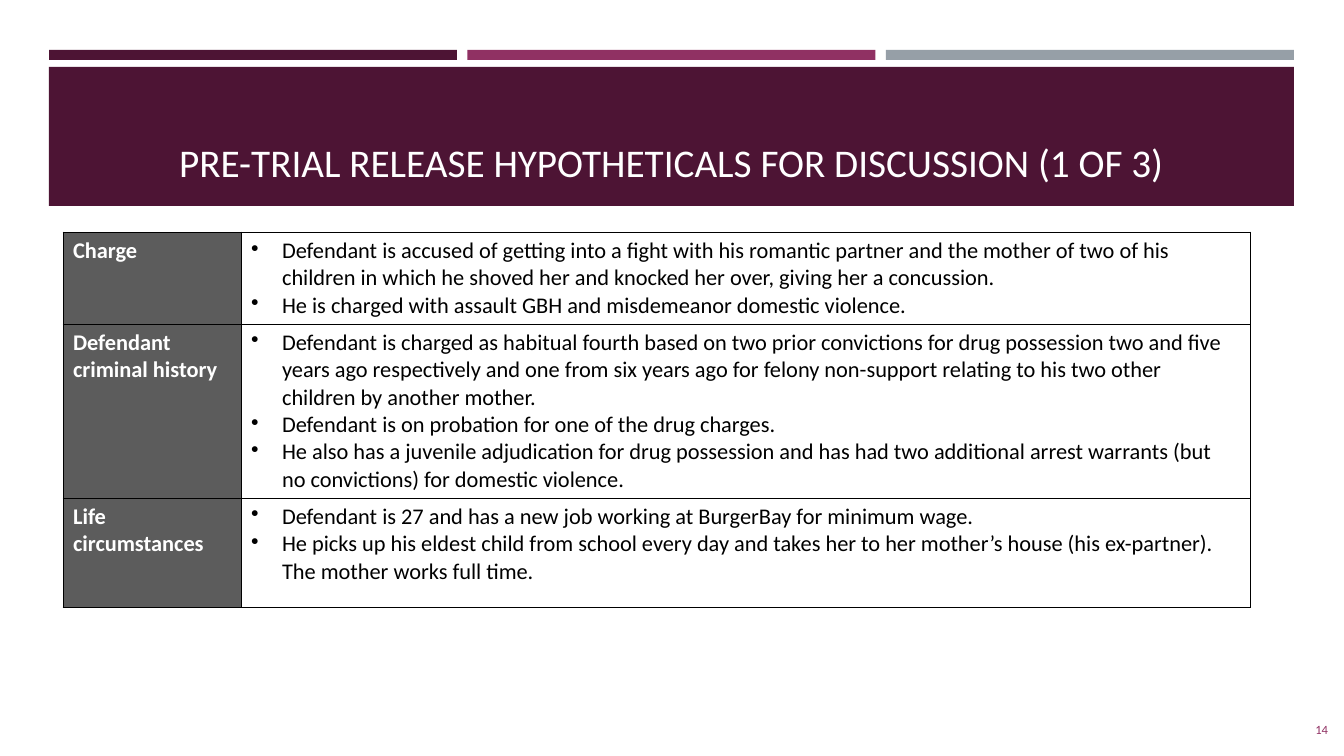
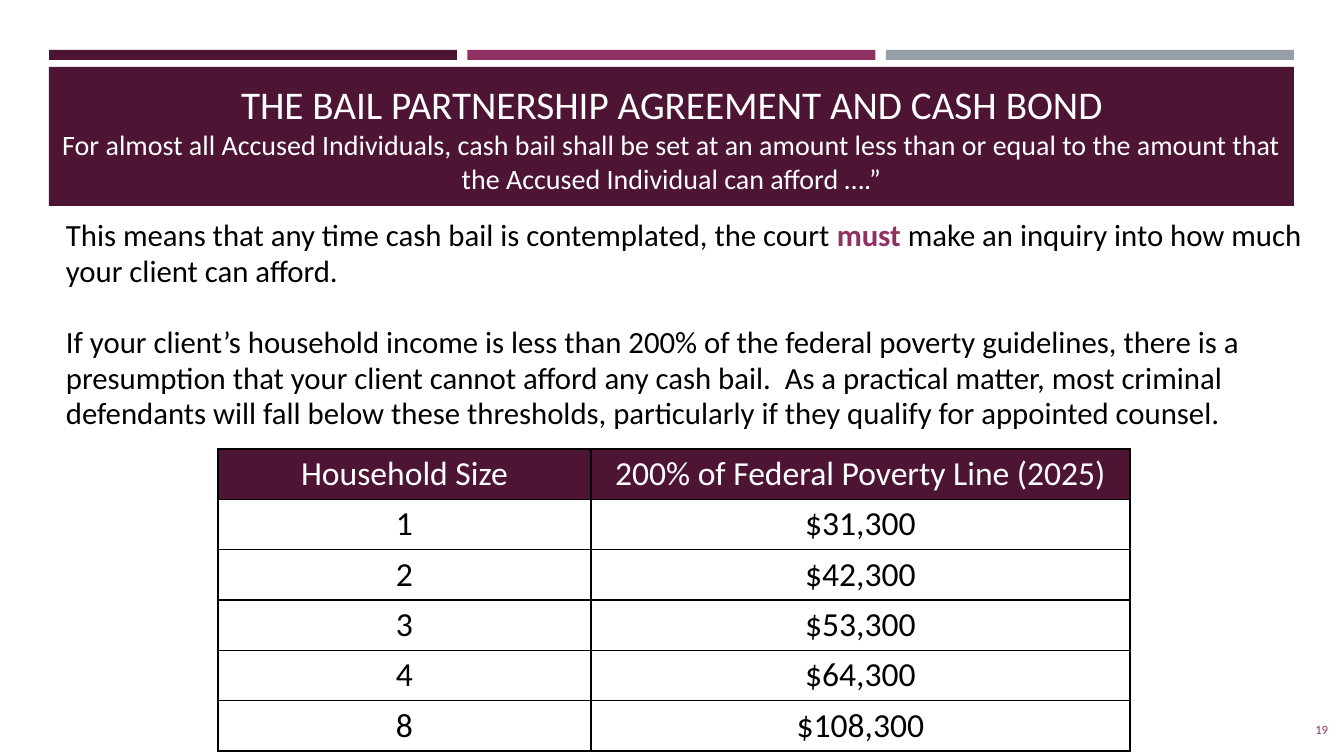
"""Build two slides on pre-trial release and cash bond, each with a title band and a table."""
import pptx
import pptx.dml.color
import pptx.enum.shapes
import pptx.enum.text
import pptx.oxml
import pptx.oxml.ns
import pptx.util

RGBColor = pptx.dml.color.RGBColor
PLUM = RGBColor(0x4D, 0x14, 0x34)
MAGENTA = RGBColor(0x90, 0x31, 0x63)
SILVER = RGBColor(0x96, 0x9F, 0xA7)
GRAY = RGBColor(0x5C, 0x5C, 0x5C)
WHITE = RGBColor(0xFF, 0xFF, 0xFF)
BLACK = RGBColor(0x00, 0x00, 0x00)

ALIGN = pptx.enum.text.PP_ALIGN
ANCHOR = pptx.enum.text.MSO_ANCHOR
FONT = "Calibri"
PX = 12192000 / 1344
BAND_LEFT, BAND_WIDTH = 49, 1245
BAR_WIDTH = 408


def px(length):
    return pptx.util.Emu(round(length * PX))


def write(text_frame, paragraphs, size, color, align=ALIGN.LEFT, bold=False, bulleted=False):
    """Fill a frame with paragraphs, each a list of (text, own font settings) runs."""
    text_frame.word_wrap = True
    for index, runs in enumerate(paragraphs):
        paragraph = text_frame.paragraphs[0] if index == 0 else text_frame.add_paragraph()
        paragraph.alignment = align
        if bulleted:
            properties = paragraph._p.get_or_add_pPr()
            properties.set("marL", str(px(31)))
            properties.set("indent", str(-px(31)))
            bullet = pptx.oxml.parse_xml(f'<a:buChar {pptx.oxml.ns.nsdecls("a")} char="•"/>')
            properties.append(bullet)
        for text, settings in runs:
            run = paragraph.add_run()
            run.text = text
            run.font.name = FONT
            run.font.size = pptx.util.Pt(settings.get("size", size))
            run.font.bold = settings.get("bold", bold)
            run.font.color.rgb = settings.get("color", color)


presentation = pptx.Presentation()
presentation.slide_width = px(1344)
presentation.slide_height = px(756)

pages = [
    {
        "number": "14",
        "title_box": (63, 81, 1216, 109),
        "title_bottom": 5,
        "title": [[("PRE-TRIAL RELEASE HYPOTHETICALS FOR DISCUSSION (1 OF 3)", {})]],
        "table_box": (63, 232, 1187, 376),
        "columns": [178, 1009],
        "border": 0.75,
    },
    {
        "number": "19",
        "title_box": (49, 106, 1245, 97),
        "title_bottom": 8,
        "title": [
            [("THE BAIL PARTNERSHIP AGREEMENT AND CASH BOND", {})],
            [("For almost all Accused Individuals, cash bail shall be set at an amount "
              "less than or equal to the amount that", {"size": 20})],
            [("the Accused Individual can afford ….”", {"size": 20})],
        ],
        "table_box": (218, 449, 912, 302),
        "columns": [373, 539],
        "border": 1,
    },
]

case_rows = [
    ("Charge", 92, [
        "Defendant is accused of getting into a fight with his romantic partner and the mother "
        "of two of his children in which he shoved her and knocked her over, giving her a concussion.",
        "He is charged with assault GBH and misdemeanor domestic violence.",
    ]),
    ("Defendant criminal history", 174, [
        "Defendant is charged as habitual fourth based on two prior convictions for drug possession "
        "two and five years ago respectively and one from six years ago for felony non-support "
        "relating to his two other children by another mother.",
        "Defendant is on probation for one of the drug charges.",
        "He also has a juvenile adjudication for drug possession and has had two additional arrest "
        "warrants (but no convictions) for domestic violence.",
    ]),
    ("Life circumstances", 110, [
        "Defendant is 27 and has a new job working at BurgerBay for minimum wage.",
        "He picks up his eldest child from school every day and takes her to her mother’s house "
        "(his ex-partner). The mother works full time.",
    ]),
]

income_rows = [
    ("Household Size", "200% of Federal Poverty Line (2025)"),
    ("1", "$31,300"),
    ("2", "$42,300"),
    ("3", "$53,300"),
    ("4", "$64,300"),
    ("8", "$108,300"),
]

slides, tables = [], []
for page, row_count in zip(pages, (len(case_rows), len(income_rows))):
    slide = presentation.slides.add_slide(presentation.slide_layouts[6])
    slides.append(slide)

    bar_step = (BAND_WIDTH - BAR_WIDTH) / 2
    blocks = [(BAND_LEFT + index * bar_step, 50, BAR_WIDTH, 10, color)
              for index, color in enumerate((PLUM, MAGENTA, SILVER))]
    blocks.append((BAND_LEFT, 67, BAND_WIDTH, 139, PLUM))
    for left, top, width, height, color in blocks:
        shape = slide.shapes.add_shape(
            pptx.enum.shapes.MSO_SHAPE.RECTANGLE, px(left), px(top), px(width), px(height))
        shape.shadow.inherit = False
        shape.fill.solid()
        shape.fill.fore_color.rgb = color
        shape.line.fill.background()

    title = slide.shapes.add_textbox(*map(px, page["title_box"])).text_frame
    title.vertical_anchor = ANCHOR.BOTTOM
    title.margin_left = title.margin_right = title.margin_top = px(4)
    title.margin_bottom = px(page["title_bottom"])
    write(title, page["title"], 28, WHITE, ALIGN.CENTER)

    number = slide.shapes.add_textbox(px(1222), px(709), px(116), px(40)).text_frame
    number.vertical_anchor = ANCHOR.MIDDLE
    write(number, [[(page["number"], {})]], 9, MAGENTA, ALIGN.RIGHT)

    table = slide.shapes.add_table(row_count, 2, *map(px, page["table_box"])).table
    tables.append(table)
    table.first_row = False
    table.horz_banding = False
    for column, width in zip(table.columns, page["columns"]):
        column.width = px(width)
    for cell in table.iter_cells():
        for side in ("lnL", "lnR", "lnT", "lnB"):
            border = pptx.oxml.parse_xml(
                f'<a:{side} {pptx.oxml.ns.nsdecls("a")} w="{pptx.util.Pt(page["border"])}">'
                f'<a:solidFill><a:srgbClr val="{BLACK}"/></a:solidFill></a:{side}>')
            cell._tc.get_or_add_tcPr().append(border)
        cell.fill.background()

case_table, income_table = tables

for row_index, (label, height, facts) in enumerate(case_rows):
    case_table.rows[row_index].height = px(height)
    label_cell = case_table.cell(row_index, 0)
    label_cell.fill.solid()
    label_cell.fill.fore_color.rgb = GRAY
    write(label_cell.text_frame, [[(label, {})]], 16, WHITE, bold=True)
    write(case_table.cell(row_index, 1).text_frame, [[(fact, {})] for fact in facts],
          16, BLACK, bulleted=True)

explanation = slides[1].shapes.add_textbox(px(62), px(214), px(1245), px(230)).text_frame
explanation.margin_left = explanation.margin_right = px(4)
explanation.margin_top = explanation.margin_bottom = px(4)
write(explanation, [
    [
        ("This means that any time cash bail is contemplated, the court ", {}),
        ("must", {"color": MAGENTA, "bold": True}),
        (" make an inquiry into how much your client can afford.", {}),
    ],
    [("If your client’s household income is less than 200% of the federal poverty guidelines, "
      "there is a presumption that your client cannot afford any cash bail.  As a practical "
      "matter, most criminal defendants will fall below these thresholds, particularly if they "
      "qualify for appointed counsel.", {})],
], 22, BLACK)
for paragraph in explanation.paragraphs:
    paragraph.line_spacing = 0.97
explanation.paragraphs[1].space_before = pptx.util.Pt(25)

for row_index, values in enumerate(income_rows):
    for column_index, value in enumerate(values):
        cell = income_table.cell(row_index, column_index)
        cell.vertical_anchor = ANCHOR.MIDDLE
        cell.margin_top = cell.margin_bottom = px(4)
        if row_index == 0:
            cell.fill.solid()
            cell.fill.fore_color.rgb = PLUM
        write(cell.text_frame, [[(value, {})]], 24, WHITE if row_index == 0 else BLACK, ALIGN.CENTER)

presentation.save("out.pptx")
